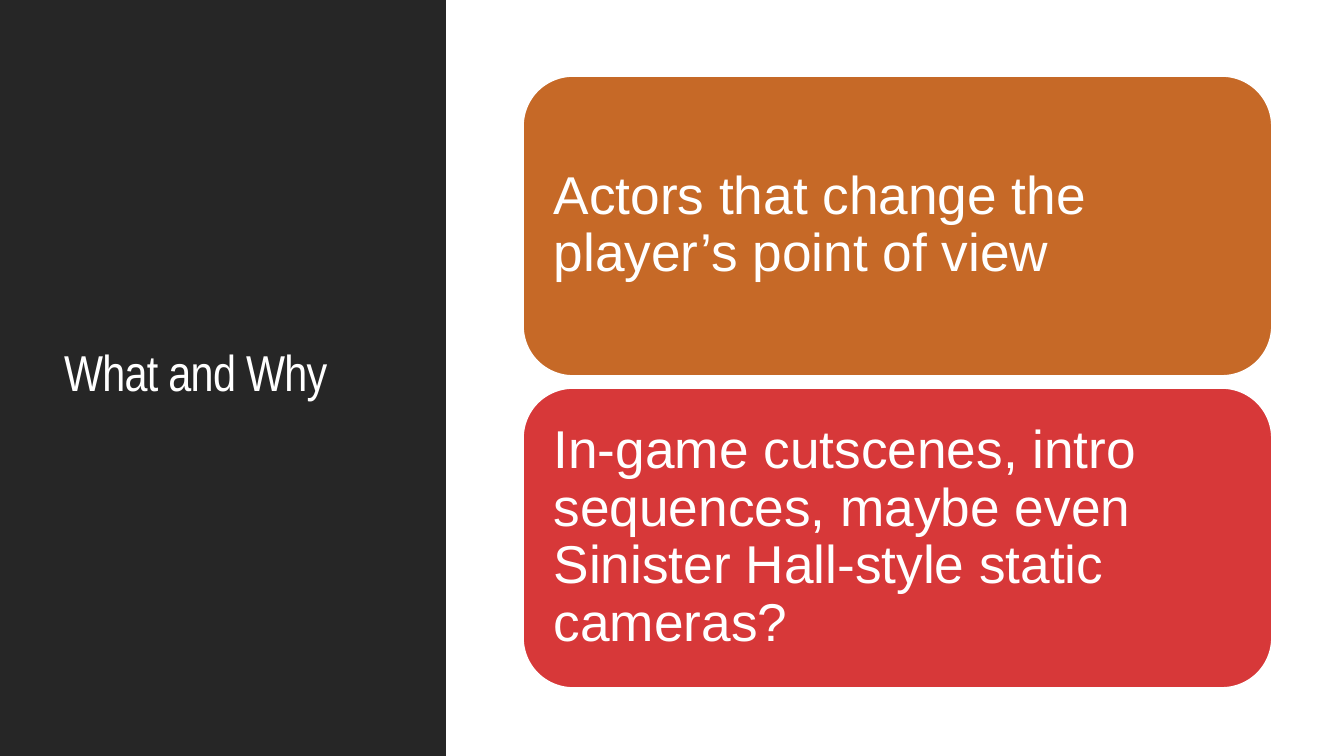
import dataclasses

import pptx
import pptx.dml.color
import pptx.enum.shapes
import pptx.enum.text
import pptx.util

TITLE = "What and Why"
CARDS = [
    ("Actors that change the player’s point of view", "C66927"),
    ("In-game cutscenes, intro sequences, maybe even "
     "Sinister Hall-style static cameras?", "D73839"),
]


@dataclasses.dataclass(frozen=True)
class Theme:
    panel: str = "262626"
    light: str = "FFFFFF"
    title_font: str = "Arial Narrow"
    body_font: str = "Arial"
    title_size: int = 36
    body_size: int = 38
    outline: float = 1.25


THEME = Theme()
SLIDE_W, SLIDE_H = 1344, 756
PANEL_W = 446
TITLE_BOX = (54, 57, 340, 636)
CARD_X, CARD_Y, CARD_W, CARD_H, CARD_GAP = 523, 76, 749, 300, 12
CARD_INSET = 16
SHAPES = pptx.enum.shapes.MSO_SHAPE


def px(n):
    return pptx.util.Emu(round(n * 914400 / 100.8))


def rgb(color):
    return pptx.dml.color.RGBColor.from_string(color)


def add_block(s, kind, box, color):
    sp = s.shapes.add_shape(kind, *map(px, box))
    sp.shadow.inherit = False
    sp.fill.solid()
    sp.fill.fore_color.rgb = rgb(color)
    sp.line.fill.background()
    return sp


def write(tf, text, font, size):
    """Fill a text frame with one left-aligned, vertically centred run."""
    tf.word_wrap = True
    tf.auto_size = pptx.enum.text.MSO_AUTO_SIZE.NONE
    tf.vertical_anchor = pptx.enum.text.MSO_ANCHOR.MIDDLE
    p = tf.paragraphs[0]
    p.alignment = pptx.enum.text.PP_ALIGN.LEFT
    p.line_spacing = 0.9
    r = p.add_run()
    r.text = text
    r.font.name = font
    r.font.size = pptx.util.Pt(size)
    r.font.color.rgb = rgb(THEME.light)
    return r


def add_title(s):
    title = s.shapes.title
    title.left, title.top, title.width, title.height = map(px, TITLE_BOX)
    r = write(title.text_frame, TITLE, THEME.title_font, THEME.title_size)
    r.font._element.set("spc", "-50")
    panel = add_block(s, SHAPES.RECTANGLE, (0, 0, PANEL_W, SLIDE_H), THEME.panel)
    title.element.addprevious(panel.element)


def add_card(s, row, text, color):
    top = CARD_Y + row * (CARD_H + CARD_GAP)
    sp = add_block(s, SHAPES.ROUNDED_RECTANGLE, (CARD_X, top, CARD_W, CARD_H), color)
    sp.line.color.rgb = rgb(THEME.light)
    sp.line.width = pptx.util.Pt(THEME.outline)
    tf = sp.text_frame
    tf.margin_left = tf.margin_right = px(CARD_INSET)
    tf.margin_top = tf.margin_bottom = px(CARD_INSET)
    write(tf, text, THEME.body_font, THEME.body_size)


def main():
    prs = pptx.Presentation()
    prs.slide_width, prs.slide_height = px(SLIDE_W), px(SLIDE_H)
    s = prs.slides.add_slide(prs.slide_layouts[5])
    s.background.fill.solid()
    s.background.fill.fore_color.rgb = rgb(THEME.light)
    add_title(s)
    for row, (text, color) in enumerate(CARDS):
        add_card(s, row, text, color)
    prs.save("out.pptx")


if __name__ == "__main__":
    main()
